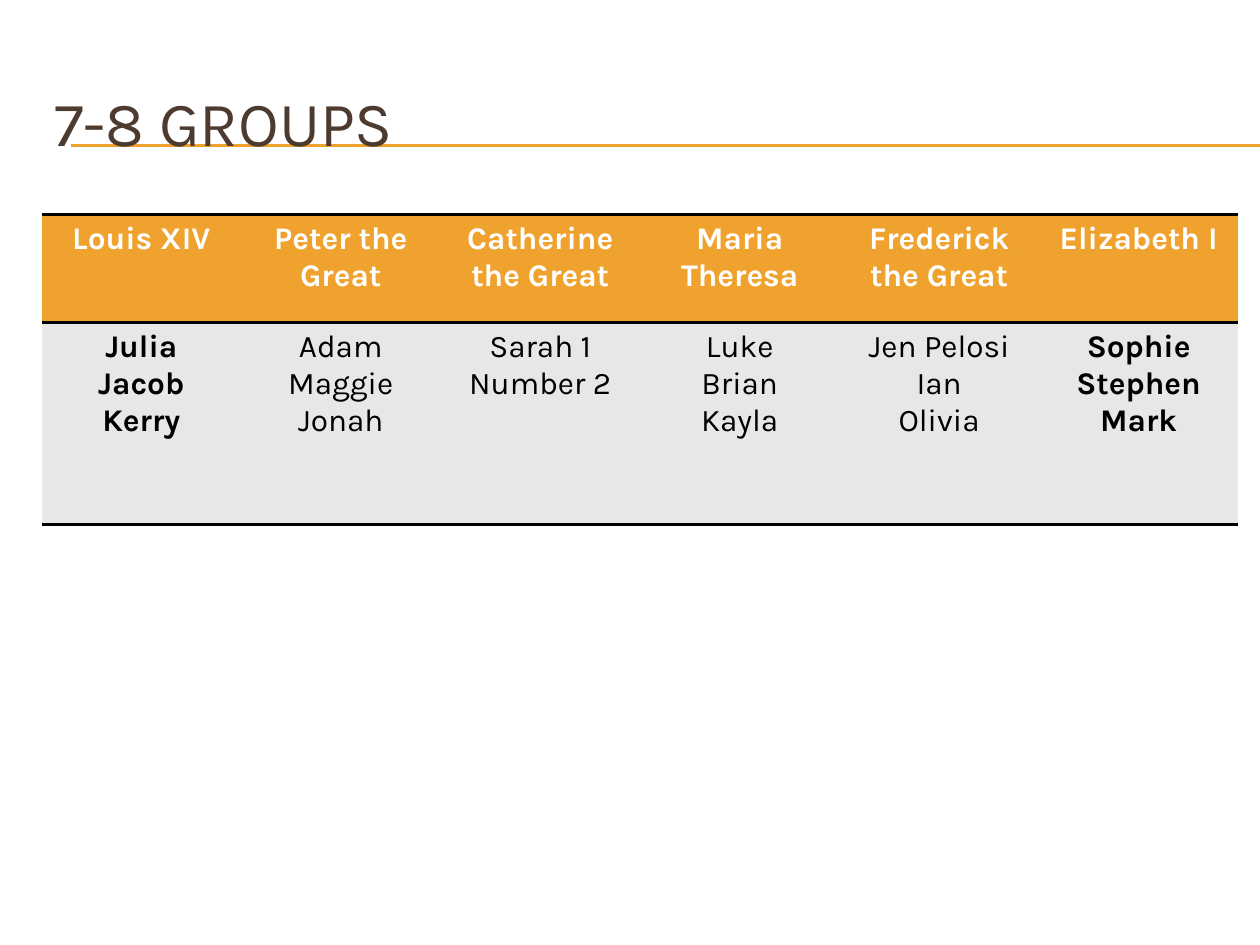
from dataclasses import dataclass

from lxml.etree import SubElement
from pptx import Presentation
from pptx.dml.color import RGBColor
from pptx.enum.shapes import MSO_CONNECTOR
from pptx.enum.text import MSO_ANCHOR, PP_ALIGN
from pptx.oxml.ns import qn
from pptx.slide import Slide
from pptx.table import _Cell
from pptx.util import Inches, Pt

FONT = "Karla"
ORANGE, BROWN, GRAY, BLACK, WHITE = "F0A22E", "4E3B30", "E7E7E7", "000000", "FFFFFF"


@dataclass
class Group:
    ruler: str
    members: list[str]
    bold: bool = False


GROUPS = [
    Group("Louis XIV", ["Julia", "Jacob", "Kerry"], True),
    Group("Peter the Great", ["Adam", "Maggie", "Jonah"]),
    Group("Catherine the Great", ["Sarah 1", "Number 2"]),
    Group("Maria Theresa", ["Luke", "Brian", "Kayla"]),
    Group("Frederick the Great", ["Jen Pelosi", "Ian", "Olivia"]),
    Group("Elizabeth I", ["Sophie", "Stephen", "Mark"], True),
]


def color(value: str) -> RGBColor:
    return RGBColor.from_string(value)


def draw_rule(slide: Slide, top: float) -> None:
    rule = slide.shapes.add_connector(
        MSO_CONNECTOR.STRAIGHT, Inches(0.56), Inches(top), Inches(10), Inches(top)
    )
    rule.line.color.rgb = color(ORANGE)
    rule.line.width = Pt(0.75)
    SubElement(rule._element.spPr, qn("a:effectLst"))


def set_borders(cell: _Cell) -> None:
    properties = cell._tc.get_or_add_tcPr()
    for side in ("lnL", "lnR"):
        border = SubElement(properties, qn(f"a:{side}"), w="0")
        SubElement(border, qn("a:noFill"))
    for side in ("lnT", "lnB"):
        border = SubElement(properties, qn(f"a:{side}"), w=str(Pt(2)))
        fill = SubElement(border, qn("a:solidFill"))
        SubElement(fill, qn("a:srgbClr"), val=BLACK)


def fill_cell(cell: _Cell, lines: list[str], background: str, ink: str, bold: bool) -> None:
    set_borders(cell)
    cell.fill.solid()
    cell.fill.fore_color.rgb = color(background)
    cell.text_frame.text = "\n".join(lines)
    for paragraph in cell.text_frame.paragraphs:
        paragraph.alignment = PP_ALIGN.CENTER
        paragraph.font.name = FONT
        paragraph.font.size = Pt(18)
        paragraph.font.bold = bold
        paragraph.font.color.rgb = color(ink)


def draw_title(slide: Slide, text: str) -> None:
    title = slide.shapes.title
    title.left, title.top = Inches(0.33), Inches(0.5)
    title.width, title.height = Inches(9.5), Inches(0.92)
    title.text_frame.text = text
    title.text_frame.vertical_anchor = MSO_ANCHOR.MIDDLE
    paragraph = title.text_frame.paragraphs[0]
    paragraph.alignment = PP_ALIGN.LEFT
    paragraph.font.name = FONT
    paragraph.font.size = Pt(36)
    paragraph.font.color.rgb = color(BROWN)


def draw_groups(slide: Slide, groups: list[Group]) -> None:
    frame = slide.shapes.add_table(
        2, len(groups), Inches(0.33), Inches(1.7), Inches(9.5), Inches(2.46)
    )
    table = frame.table
    table.horz_banding = False
    table.rows[0].height = Inches(0.86)
    table.rows[1].height = Inches(1.6)
    for column, group in enumerate(groups):
        fill_cell(table.cell(0, column), [group.ruler], ORANGE, WHITE, True)
        fill_cell(table.cell(1, column), group.members, GRAY, BLACK, group.bold)


def main() -> None:
    deck = Presentation()
    deck.slide_width, deck.slide_height = Inches(10), Inches(7.5)
    slide = deck.slides.add_slide(deck.slide_layouts[5])
    slide.background.fill.solid()
    slide.background.fill.fore_color.rgb = color(WHITE)
    for top in (1.15, 1.16):
        draw_rule(slide, top)
    title = slide.shapes.title._element
    title.getparent().append(title)
    draw_title(slide, "7-8 GROUPS")
    draw_groups(slide, GROUPS)
    deck.save("out.pptx")


if __name__ == "__main__":
    main()
